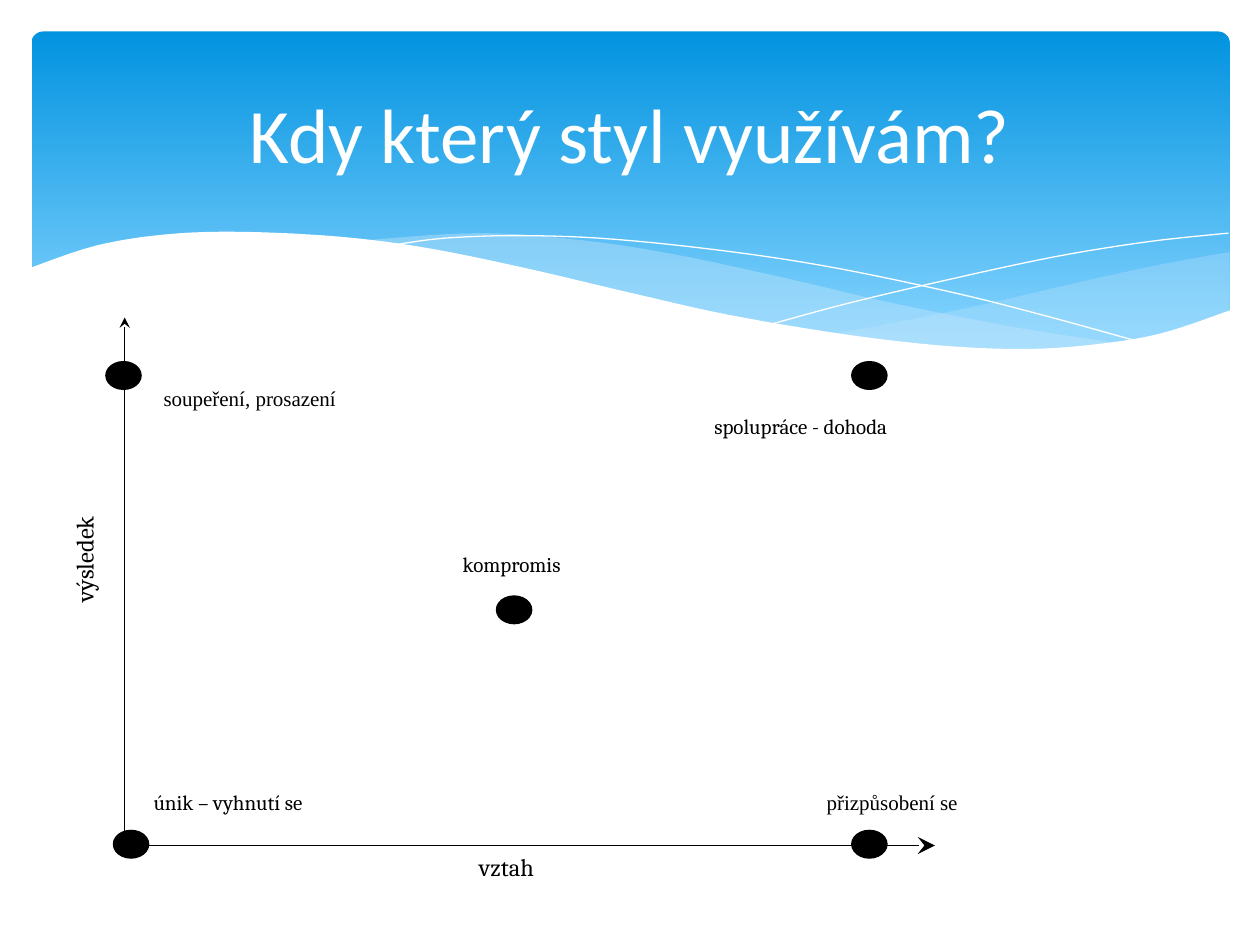
from dataclasses import dataclass
from typing import Optional

from lxml.etree import SubElement
from pptx import Presentation
from pptx.dml.color import RGBColor
from pptx.enum.shapes import MSO_CONNECTOR, MSO_SHAPE
from pptx.enum.text import MSO_ANCHOR, PP_ALIGN
from pptx.oxml.ns import qn
from pptx.util import Inches, Pt

BLACK = RGBColor(0x00, 0x00, 0x00)
WHITE = RGBColor(0xFF, 0xFF, 0xFF)
SKY_TOP = RGBColor(0x02, 0x93, 0xE0)
SKY_BOTTOM = RGBColor(0x83, 0xD3, 0xFE)
MIST = RGBColor(0xC6, 0xE7, 0xFC)

SERIF = "Cambria"
TIMES = "Times New Roman"
DOT_WIDTH, DOT_HEIGHT = 0.28, 0.22
CURVE_STEPS = 6

Point = tuple[float, float]
Curve = tuple[Point, ...]


@dataclass(frozen=True)
class Wave:
    edges: tuple[Curve, ...]
    fill: Optional[RGBColor] = None
    opacity: int = 100


@dataclass(frozen=True)
class Label:
    text: str
    left: float
    top: float
    width: float
    height: float = 0.29
    align: PP_ALIGN = PP_ALIGN.CENTER
    font: str = SERIF
    size: int = 12
    color: RGBColor = BLACK
    fill: Optional[RGBColor] = WHITE
    anchor: MSO_ANCHOR = MSO_ANCHOR.TOP
    rotation: int = 0


@dataclass(frozen=True)
class Axis:
    start: Point
    end: Point
    arrow_size: str


WAVES = (
    Wave((((9.76, 2), (9.21, 2.1), (8.61, 2.23), (7.79, 2.42), (7.06, 2.57), (6.61, 2.65)),
          ((6.61, 2.65), (7.05, 2.71), (7.57, 2.76), (8.14, 2.78), (8.72, 2.74),
           (9.21, 2.65), (9.76, 2.47))), MIST, 29),
    Wave((((8.93, 2.73), (8.07, 2.6), (7.06, 2.4), (6.29, 2.22), (5.41, 2.03),
           (4.65, 1.91), (3.8, 1.85), (2.86, 1.91)),
          ((2.86, 1.91), (3.62, 2.03), (4.49, 2.22), (5.3, 2.4), (6.18, 2.58),
           (6.95, 2.7), (7.61, 2.77), (8.28, 2.78), (8.93, 2.73))), MIST, 40),
    Wave((((3.09, 1.95), (3.53, 1.89), (4.16, 1.87), (4.89, 1.9), (5.82, 2),
           (6.65, 2.13), (7.6, 2.33), (8.31, 2.51), (9.07, 2.72)),)),
    Wave((((6.13, 2.57), (6.72, 2.41), (7.48, 2.23), (8.36, 2.04), (9.1, 1.92), (9.75, 1.85)),)),
    Wave((((9.77, 2.46), (9.2, 2.65), (8.63, 2.74), (8.09, 2.77), (7.44, 2.74),
           (6.68, 2.65), (5.79, 2.5), (5.03, 2.33), (4.18, 2.13), (3.4, 1.97),
           (2.71, 1.88), (1.93, 1.84), (1.32, 1.86), (0.76, 1.95), (0.23, 2.13)),
          ((0.23, 3.29), (9.77, 3.29))), WHITE),
)

AXES = (
    Axis((0.99, 6.71), (0.99, 2.52), "med"),
    Axis((0.99, 6.71), (7.42, 6.71), "lg"),
)

DOTS = ((3.94, 4.73), (0.9, 6.59), (6.76, 6.59), (0.84, 2.87), (6.76, 2.87))

LABELS = (
    Label("Kdy který styl využívám?", 0.5, 0.37, 9, 1.37, font="Calibri", size=44,
          color=WHITE, fill=None, anchor=MSO_ANCHOR.MIDDLE),
    Label("vztah", 2.18, 6.71, 3.68, 0.34, size=14, fill=None),
    Label("výsledek", -0.22, 4.24, 1.84, 0.4, size=14, fill=None, rotation=270),
    Label("soupeření, prosazení", 1.2, 3.01, 1.88, align=PP_ALIGN.LEFT, font=TIMES),
    Label("únik – vyhnutí se", 1.12, 6.22, 1.88, align=PP_ALIGN.LEFT),
    Label("kompromis", 3.12, 4.33, 1.88),
    Label("přizpůsobení se", 5.82, 6.22, 1.88, align=PP_ALIGN.RIGHT, font=TIMES),
    Label("spolupráce - dohoda", 4.78, 3.23, 2.36, align=PP_ALIGN.RIGHT),
)


def smooth(knots: Curve) -> list[Point]:
    """Return points along a Catmull-Rom curve through the knots."""
    padded = (knots[0], *knots, knots[-1])
    points = [knots[0]]
    for before, start, end, after in zip(padded, padded[1:], padded[2:], padded[3:]):
        for step in range(1, CURVE_STEPS + 1):
            t = step / CURVE_STEPS
            x, y = (
                b + ((c - a) * t + (2 * a - 5 * b + 4 * c - d) * t**2
                     + (3 * b - a - 3 * c + d) * t**3) / 2
                for a, b, c, d in zip(before, start, end, after)
            )
            points.append((x, y))
    return points


def add_banner(page) -> None:
    """Draw the rounded blue gradient behind the title."""
    banner = page.shapes.add_shape(
        MSO_SHAPE.ROUNDED_RECTANGLE, Inches(0.25), Inches(0.25), Inches(9.51), Inches(2.7))
    banner.adjustments[0] = 0.034
    banner.shadow.inherit = False
    banner.line.fill.background()
    banner.fill.gradient()
    banner.fill.gradient_angle = 270
    stops = banner.fill.gradient_stops
    for stop, position, color in zip(stops, (0, 0.9), (SKY_TOP, SKY_BOTTOM)):
        stop.position = position
        stop.color.rgb = color


def add_wave(page, wave: Wave) -> None:
    """Draw a filled wave, or a white hairline where there is no fill."""
    points = [(Inches(x), Inches(y)) for edge in wave.edges for x, y in smooth(edge)]
    builder = page.shapes.build_freeform(*points[0])
    builder.add_line_segments(points[1:], close=wave.fill is not None)
    shape = builder.convert_to_shape()
    shape.shadow.inherit = False
    if wave.fill is None:
        shape.fill.background()
        shape.line.color.rgb = WHITE
        shape.line.width = Pt(0)
        return
    shape.line.fill.background()
    shape.fill.solid()
    shape.fill.fore_color.rgb = wave.fill
    if wave.opacity < 100:
        color = shape.element.spPr.find(qn("a:solidFill"))[0]
        SubElement(color, qn("a:alpha"), val=str(wave.opacity * 1000))


def add_axis(page, axis: Axis) -> None:
    """Draw a thin black axis with an arrowhead at its end."""
    ends = (Inches(value) for value in (*axis.start, *axis.end))
    line = page.shapes.add_connector(MSO_CONNECTOR.STRAIGHT, *ends)
    line.line.color.rgb = BLACK
    line.line.width = Pt(0.75)
    SubElement(line.line._get_or_add_ln(), qn("a:tailEnd"),
               type="stealth", w=axis.arrow_size, len=axis.arrow_size)
    SubElement(line.element.spPr, qn("a:effectLst"))


def add_dot(page, left: float, top: float) -> None:
    """Draw a black dot marking one style."""
    dot = page.shapes.add_shape(
        MSO_SHAPE.OVAL, Inches(left), Inches(top), Inches(DOT_WIDTH), Inches(DOT_HEIGHT))
    dot.shadow.inherit = False
    dot.fill.solid()
    dot.fill.fore_color.rgb = BLACK
    dot.line.color.rgb = BLACK
    dot.line.width = Pt(0.75)


def add_label(page, label: Label) -> None:
    """Write one line of text in its box."""
    box = page.shapes.add_textbox(
        Inches(label.left), Inches(label.top), Inches(label.width), Inches(label.height))
    box.rotation = label.rotation
    if label.fill is not None:
        box.fill.solid()
        box.fill.fore_color.rgb = label.fill
    frame = box.text_frame
    frame.word_wrap = True
    frame.vertical_anchor = label.anchor
    para = frame.paragraphs[0]
    para.text = label.text
    para.alignment = label.align
    para.font.name = label.font
    para.font.size = Pt(label.size)
    para.font.color.rgb = label.color


def main() -> None:
    """Build the slide and save the deck."""
    deck = Presentation()
    deck.slide_width, deck.slide_height = Inches(10), Inches(7.5)
    page = deck.slides.add_slide(deck.slide_layouts[6])
    add_banner(page)
    for wave in WAVES:
        add_wave(page, wave)
    for axis in AXES:
        add_axis(page, axis)
    for dot in DOTS:
        add_dot(page, *dot)
    for label in LABELS:
        add_label(page, label)
    deck.save("out.pptx")


if __name__ == "__main__":
    main()
